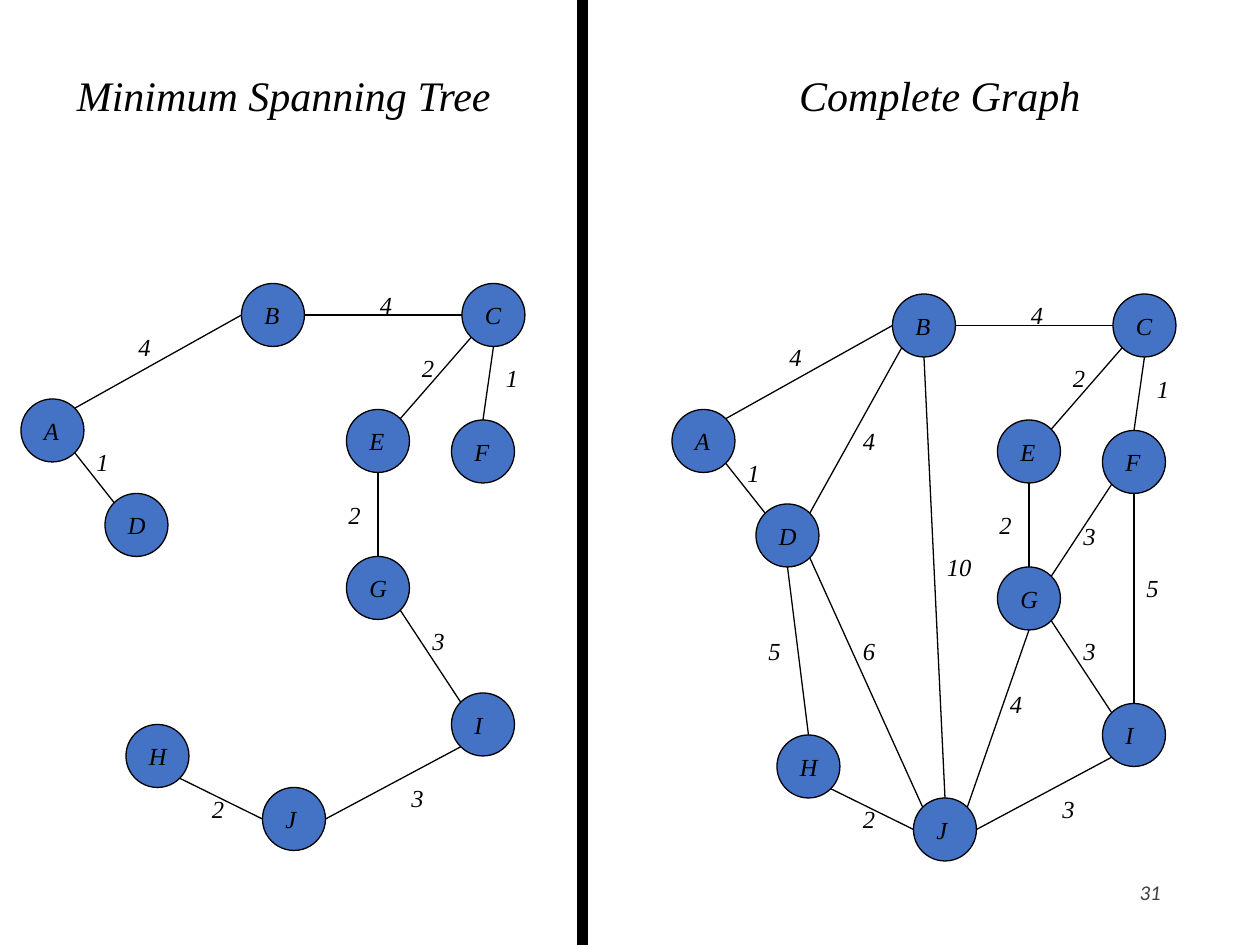
from collections import namedtuple
from math import sqrt

from lxml.etree import SubElement
from pptx import Presentation
from pptx.dml.color import RGBColor
from pptx.enum.shapes import MSO_CONNECTOR as Connector, MSO_SHAPE as Shape
from pptx.enum.text import MSO_ANCHOR as Anchor, MSO_AUTO_SIZE as AutoSize, PP_ALIGN as Align
from pptx.oxml.ns import qn
from pptx.util import Cm, Pt

Box = namedtuple("Box", "left top width height")

GRID = 2.54 / 12
NODE_SIZE = 6 * GRID
LABEL_HEIGHT = 0.84
BLACK, BLUE, GREY = "000000", "4472C4", "404040"

SERIF = {"name": "Times New Roman", "italic": True}
LABEL_FONT = {**SERIF, "size": Pt(14)}
HEADING_FONT = {**SERIF, "size": Pt(24), "bold": False}
NUMBER_FONT = {"name": "Calibri", "italic": True, "size": Pt(12)}

DIAGONAL = sqrt(0.5)
SITES = {
    "N": (0, -1), "S": (0, 1), "W": (-1, 0), "E": (1, 0),
    "NW": (-DIAGONAL, -DIAGONAL), "NE": (DIAGONAL, -DIAGONAL),
    "SW": (-DIAGONAL, DIAGONAL), "SE": (DIAGONAL, DIAGONAL),
}

# name: grid column, grid row, label width
NODES = {
    "A": (2, 38, 0.86), "B": (23, 27, 0.84), "C": (44, 27, 0.84),
    "D": (10, 47, 0.86), "E": (33, 39, 0.81), "F": (43, 40, 0.79),
    "G": (33, 53, 0.86), "H": (12, 69, 0.86), "I": (43, 66, 0.69),
    "J": (25, 75, 0.71),
}

# start node, site, end node, site, weight, label column, label row
TREE_EDGES = [
    ("A", "NE", "B", "W", "4", 12, 31),
    ("A", "SE", "D", "NW", "1", 8, 42),
    ("B", "E", "C", "W", "4", 35, 27),
    ("C", "SW", "E", "NE", "2", 39, 33),
    ("C", "S", "F", "N", "1", 47, 34),
    ("E", "S", "G", "N", "2", 32, 47),
    ("G", "SE", "I", "NW", "3", 40, 59),
    ("J", "E", "I", "SW", "3", 38, 74),
    ("H", "SE", "J", "W", "2", 19, 75),
]
OTHER_EDGES = [
    ("B", "SW", "D", "NE", "4", 19, 39),
    ("B", "S", "J", "N", "10", 27, 51),
    ("D", "SE", "J", "NW", "6", 19, 59),
    ("D", "S", "H", "N", "5", 10, 59),
    ("F", "SW", "G", "NE", "3", 40, 48),
    ("F", "S", "I", "N", "5", 46, 53),
    ("G", "S", "J", "NE", "4", 33, 64),
]


def rgb(value):
    return RGBColor.from_string(value)


def to_cm(box):
    return [Cm(length) for length in box]


def set_all(target, values):
    for name, value in values.items():
        setattr(target, name, value)


def write_text(shape, text, font, color=BLACK, align=Align.LEFT, **frame_format):
    frame = shape.text_frame
    set_all(frame, {"word_wrap": True, "vertical_anchor": Anchor.TOP, **frame_format})
    para = frame.paragraphs[0]
    para.alignment = align
    span = para.add_run()
    span.text = text
    set_all(span.font, font)
    span.font.color.rgb = rgb(color)


def add_label(page, text, left, top, width):
    label = page.shapes.add_textbox(*to_cm((left, top, width, LABEL_HEIGHT)))
    write_text(label, text, LABEL_FONT, word_wrap=False,
               auto_size=AutoSize.SHAPE_TO_FIT_TEXT)


def add_solid(page, kind, box, color):
    solid = page.shapes.add_shape(kind, *to_cm(box))
    solid.shadow.inherit = False
    solid.fill.solid()
    solid.fill.fore_color.rgb = rgb(color)
    solid.line.color.rgb = rgb(BLACK)
    solid.line.width = Pt(0.75)


def add_edge(page, start, end):
    edge = page.shapes.add_connector(Connector.STRAIGHT, *to_cm(start + end))
    edge.line.color.rgb = rgb(BLACK)
    edge.line.width = Pt(0.75)
    SubElement(edge.element.spPr, qn("a:effectLst"))


def draw_graph(page, box, edges):
    def place(column, row):
        return box.left + column * GRID, box.top + row * GRID

    def site_point(name, site):
        column, row, _ = NODES[name]
        across, down = SITES[site]
        return place(column + 3 + 3 * across, row + 3 + 3 * down)

    for start, start_site, end, end_site, *_ in edges:
        add_edge(page, site_point(start, start_site), site_point(end, end_site))
    for name, (column, row, width) in NODES.items():
        add_solid(page, Shape.OVAL, (*place(column, row), NODE_SIZE, NODE_SIZE), BLUE)
        add_label(page, name, *place(column + 1, row + 1), width)
    for *_, weight, column, row in edges:
        add_label(page, weight, *place(column, row), 0.5 + 0.26 * len(weight))


def draw_heading(shape, box, text):
    set_all(shape, dict(zip(Box._fields, to_cm(box))))
    write_text(shape, text, HEADING_FONT, align=Align.CENTER,
               auto_size=AutoSize.SHAPE_TO_FIT_TEXT)


def draw_page_number(page, box, text):
    number = page.shapes.add_textbox(*to_cm(box))
    write_text(number, text, NUMBER_FONT, GREY, Align.RIGHT,
               vertical_anchor=Anchor.MIDDLE)


def main():
    deck = Presentation()
    deck.slide_width, deck.slide_height = Cm(25.4), Cm(19.05)
    page = deck.slides.add_slide(deck.slide_layouts[5])

    draw_heading(page.shapes.title, Box(0.85, 1.27, 9.74, 1.27), "Minimum Spanning Tree")
    right_heading = page.shapes.add_textbox(0, 0, 0, 0)
    draw_heading(right_heading, Box(15.24, 1.27, 7.41, 1.27), "Complete Graph")

    draw_graph(page, Box(0, 0, 11.64, 19.05), TREE_EDGES)
    draw_graph(page, Box(62 * GRID, GRID, 12.28, 18.84), TREE_EDGES + OTHER_EDGES)
    add_solid(page, Shape.RECTANGLE, Box(11.64, 0, 0.21, 19.05), BLACK)
    draw_page_number(page, Box(17.93, 17.53, 5.72, 0.89), "31")

    deck.save("out.pptx")


if __name__ == "__main__":
    main()
